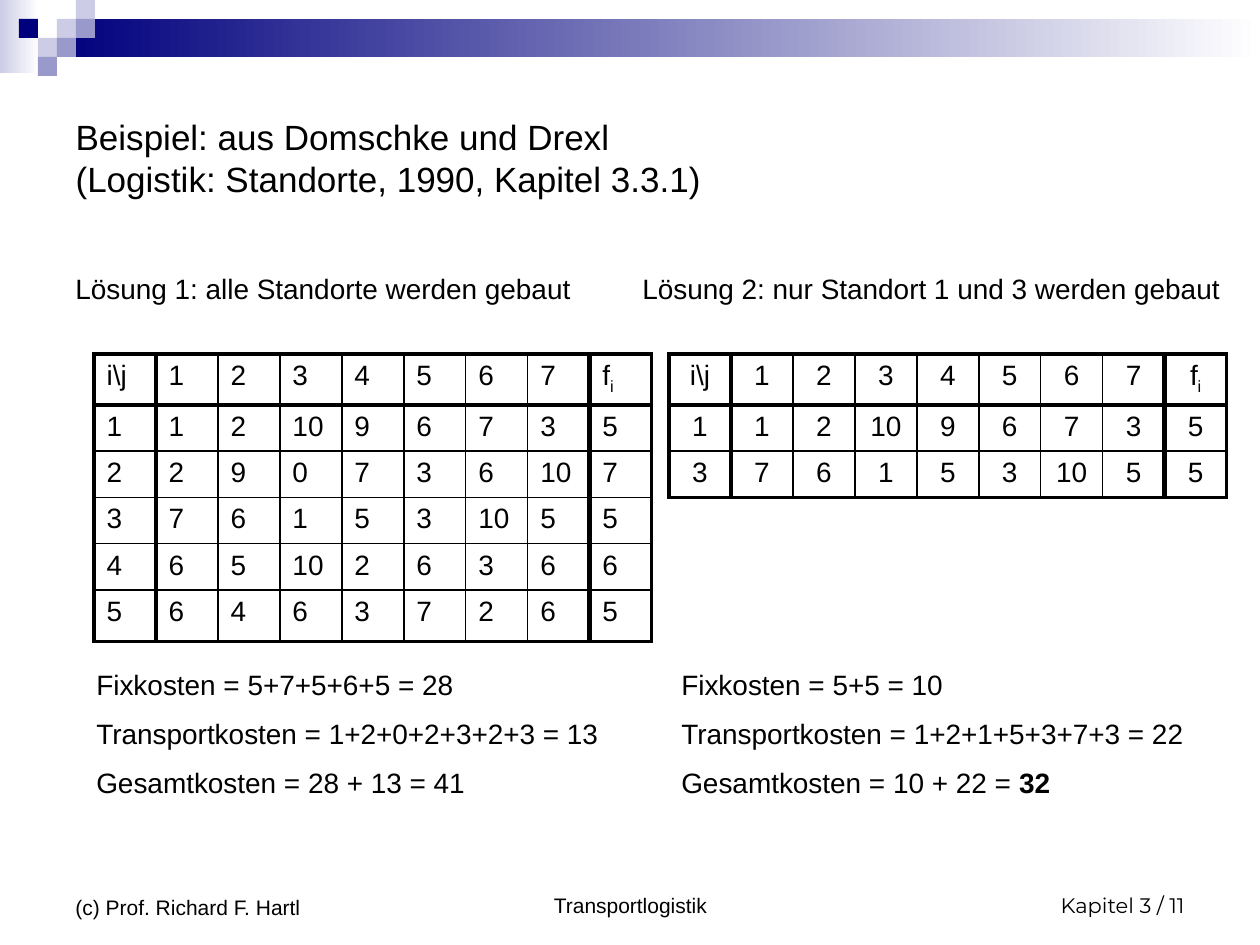
from pptx import Presentation
from pptx.dml.color import RGBColor
from pptx.enum.shapes import MSO_SHAPE
from pptx.enum.text import MSO_ANCHOR, MSO_AUTO_SIZE, PP_ALIGN
from pptx.oxml.ns import qn
from pptx.util import Pt
from lxml import etree

RECT = MSO_SHAPE.RECTANGLE
TOP, MIDDLE, BOTTOM = MSO_ANCHOR.TOP, MSO_ANCHOR.MIDDLE, MSO_ANCHOR.BOTTOM
LEFT, CENTER, RIGHT = PP_ALIGN.LEFT, PP_ALIGN.CENTER, PP_ALIGN.RIGHT
FIXED = MSO_AUTO_SIZE.NONE
SCALE = 914400 / 126
NAVY, LILAC, MID, WHITE, BLACK = "00007D", "CCCCE6", "9999CC", "FFFFFF", "000000"
THIN, FRAME, THICK = 1, 2.25, 3
CELL = 19


def px(n):
    """Turn pixels into EMU."""
    return round(n * SCALE)


def rgb(code):
    """Turn a hex string into a colour."""
    return RGBColor.from_string(code)


class Page:
    """Holds the text style and the current slide."""

    def __init__(self, slide, font="Arial", size=16):
        self.slide, self.font, self.size = slide, font, size

    def run(self, para, text, size=None, font=None, bold=None, sub=False):
        """Add one styled run."""
        run = para.add_run()
        run.text = text
        run.font.name = font or self.font
        run.font.size = Pt(size or self.size)
        run.font.bold = bold
        run.font.color.rgb = rgb(BLACK)
        if sub:
            run._r.get_or_add_rPr().set("baseline", "-25000")

    def block(self, x, y, w, h, fill, fade=None):
        """Draw a plain or fading rectangle."""
        shape = self.slide.shapes.add_shape(RECT, px(x), px(y), px(w), px(h))
        shape.shadow.inherit = False
        shape.line.fill.background()
        if fade:
            shape.fill.gradient()
            shape.fill.gradient_angle = 0
            for stop, code in zip(shape.fill.gradient_stops, (fill, fade)):
                stop.color.rgb = rgb(code)
        else:
            shape.fill.solid()
            shape.fill.fore_color.rgb = rgb(fill)

    def title(self, x, y, w, h, lines, size):
        """Place and fill the title."""
        shape = self.slide.shapes.title
        shape.left, shape.top, shape.width, shape.height = map(px, (x, y, w, h))
        frame = shape.text_frame
        frame.auto_size, frame.vertical_anchor = FIXED, MIDDLE
        para = frame.paragraphs[0]
        para.alignment = LEFT
        for i, line in enumerate(lines):
            if i:
                para.add_line_break()
            self.run(para, line, size)

    def text(self, x, y, w, h, lines, align=LEFT, anchor=TOP, gap=9, **style):
        """Add a text box; a line is a list of (text, bold) pairs."""
        box = self.slide.shapes.add_textbox(px(x), px(y), px(w), px(h))
        frame = box.text_frame
        frame.word_wrap, frame.vertical_anchor = True, anchor
        for i, line in enumerate(lines):
            para = frame.add_paragraph() if i else frame.paragraphs[0]
            para.alignment = align
            para.space_before = Pt(gap if i else 0)
            for part, bold in line:
                self.run(para, part, bold=bold, **style)

    def border(self, cell, side, width):
        """Draw one side of a cell."""
        line = etree.SubElement(cell._tc.get_or_add_tcPr(), qn("a:ln" + side), w=str(Pt(width)))
        fill = etree.SubElement(line, qn("a:solidFill"))
        etree.SubElement(fill, qn("a:srgbClr"), val=BLACK)

    def table(self, x, y, wide, highs, rows, align):
        """Add a cost table with a heavy head, first and last column."""
        count = len(rows[0])
        grid = self.slide.shapes.add_table(
            len(rows), count, px(x), px(y), px(wide * count), px(sum(highs))).table
        grid.first_row = grid.horz_banding = False
        for col in grid.columns:
            col.width = px(wide)
        across = [FRAME, THICK] + [THIN] * (count - 3) + [THICK, FRAME]
        down = [FRAME, THICK] + [THIN] * (len(rows) - 2) + [FRAME]
        for r, row in enumerate(rows):
            grid.rows[r].height = px(highs[r])
            for c, value in enumerate(row):
                cell = grid.cell(r, c)
                sides = (across[c], across[c + 1], down[r], down[r + 1])
                for side, width in zip("LRTB", sides):
                    self.border(cell, side, width)
                cell.fill.background()
                para = cell.text_frame.paragraphs[0]
                para.alignment = align
                for i, part in enumerate(value.split("_")):
                    self.run(para, part, sub=i > 0)


def main():
    """Build the slide."""
    deck = Presentation()
    deck.slide_width, deck.slide_height = px(1260), px(945)
    page = Page(deck.slides.add_slide(deck.slide_layouts[5]))

    page.block(0, 0, 39, 73, LILAC, WHITE)
    page.block(3 * CELL, CELL, 1260 - 3 * CELL, 2 * CELL, NAVY, WHITE)
    squares = [(3, 1, LILAC), (4, 0, LILAC), (4, 1, MID), (2, 2, LILAC),
               (1, 1, NAVY), (3, 2, MID), (2, 3, MID)]
    for col, row, fill in squares:
        page.block(col * CELL, row * CELL, CELL, CELL, fill)

    page.title(63, 63, 1143, 189, ["Beispiel: aus Domschke und Drexl ",
                                   "(Logistik: Standorte, 1990, Kapitel 3.3.1)"], 20)
    page.text(63, 265, 557, 59, [[("Lösung 1: alle Standorte werden gebaut", None)]])
    page.text(630, 265, 605, 47, [[("Lösung 2: nur Standort 1 und 3 werden gebaut", None)]])

    head = ["i\\j", *"1234567", "f_i"]
    costs = ["1 1 2 10 9 6 7 3 5", "2 2 9 0 7 3 6 10 7", "3 7 6 1 5 3 10 5 5",
             "4 6 5 10 2 6 3 6 6", "5 6 4 6 3 7 2 6 5"]
    rows = [line.split() for line in costs]
    page.table(94, 354, 62, [48, 46, 46, 46, 46, 52], [head] + rows, LEFT)
    page.table(669, 354, 62, [48, 46, 46], [head, rows[0], rows[2]], CENTER)

    page.text(84, 661, 566, 147, [
        [("Fixkosten = 5+7+5+6+5 = 28", None)],
        [("Transportkosten = 1+2+0+2+3+2+3 = 13", None)],
        [("Gesamtkosten = 28 + 13 = 41", None)]])
    page.text(669, 661, 566, 147, [
        [("Fixkosten = 5+5 = 10", None)],
        [("Transportkosten = 1+2+1+5+3+7+3 = 22", None)],
        [("Gesamtkosten = 10 + 22 = ", None), ("32", True)]])

    notes = [(63, 294, 65, "(c) Prof. Richard F. Hartl", LEFT, "Arial"),
             (431, 399, 63, "Transportlogistik", CENTER, "Arial"),
             (903, 294, 63, "Kapitel 3 / 11", RIGHT, "Montserrat")]
    for x, w, h, words, align, font in notes:
        page.text(x, 861, w, h, [[(words, None)]], align, BOTTOM, size=12, font=font)

    deck.save("out.pptx")


if __name__ == "__main__":
    main()
